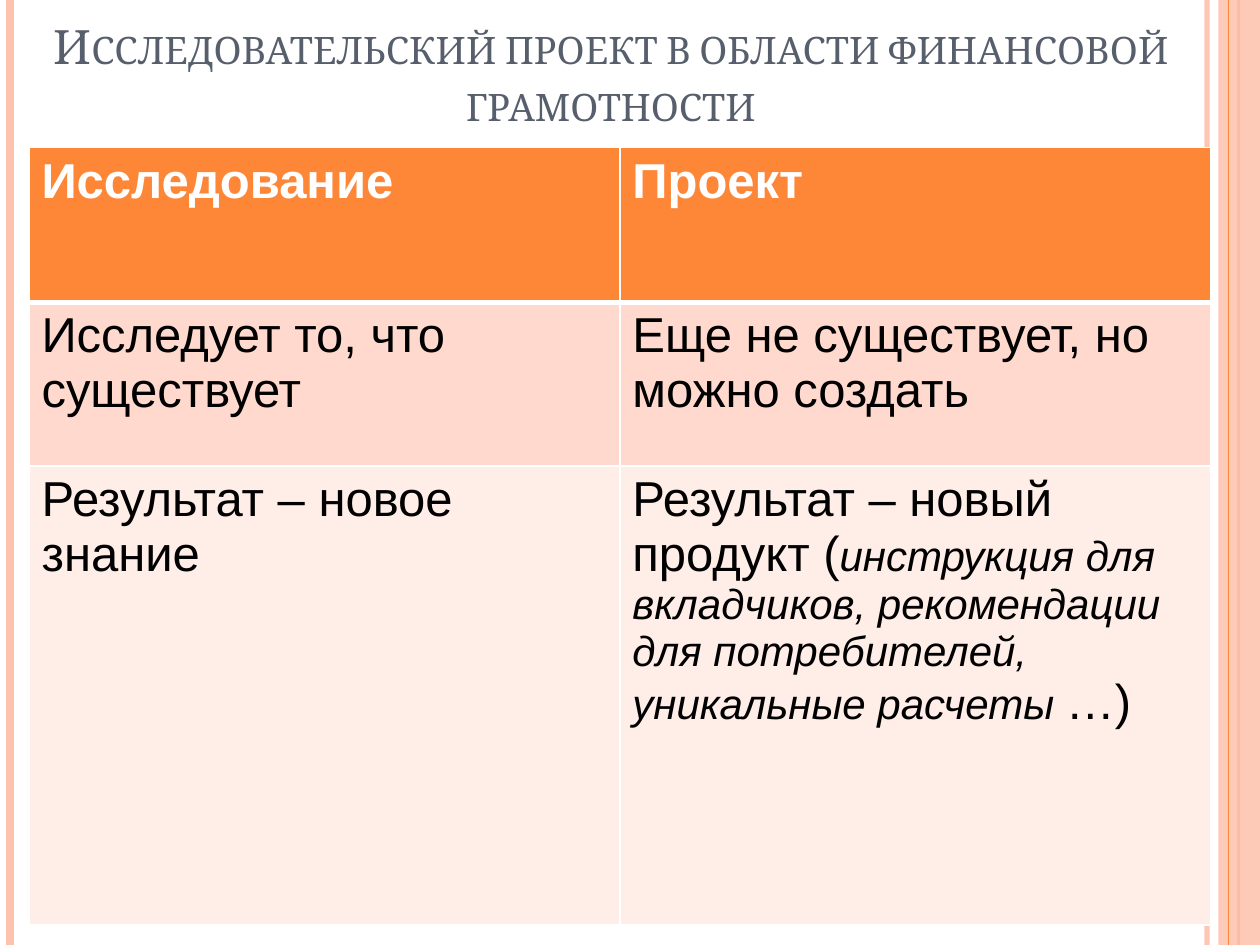
from lxml import etree
from pptx import Presentation
from pptx.dml.color import RGBColor as RGB
from pptx.enum.shapes import MSO_CONNECTOR as CONN, MSO_SHAPE as SHAPE
from pptx.enum.text import MSO_ANCHOR as ANCHOR, PP_ALIGN as ALIGN
from pptx.oxml.ns import qn
from pptx.util import Inches, Pt

COLORS = {
    "orange": "FE8637", "peach": "FEC3AE", "slate": "575F6D",
    "white": "FFFFFF", "black": "000000",
    "band_dark": "FFD9CE", "band_light": "FFEDE8",
}


def color(name):
    return RGB.from_string(COLORS[name])


def set_alpha(element, percent):
    """Make the first solid colour inside the element partly transparent."""
    rgb = next(element.iter(qn("a:srgbClr")))
    etree.SubElement(rgb, qn("a:alpha")).set("val", str(percent * 1000))


def add_run(p, text, font="Arial", size=28, fill="black", bold=False,
            italic=False, small_caps=False):
    r = p.add_run()
    r.text = text
    r.font.name, r.font.size = font, Pt(size)
    r.font.bold, r.font.italic = bold, italic
    r.font.color.rgb = color(fill)
    if small_caps:
        r._r.get_or_add_rPr().set("cap", "small")
    return r


def add_border(cell, side, width):
    ln = etree.SubElement(cell._tc.get_or_add_tcPr(), qn(f"a:ln{side}"),
                          w=str(Pt(width)))
    solid = etree.SubElement(ln, qn("a:solidFill"))
    etree.SubElement(solid, qn("a:srgbClr"), val=COLORS["white"])


class SlideBuilder:
    """Holds the slide and draws its elements in one style."""

    def __init__(self, prs):
        self.slide = prs.slides.add_slide(prs.slide_layouts[6])
        self.shapes = self.slide.shapes
        self.height = prs.slide_height
        bg = self.slide.background.fill
        bg.solid()
        bg.fore_color.rgb = color("white")

    def stripe(self, x, name, width, alpha=None):
        """Vertical line over the full slide height."""
        sp = self.shapes.add_connector(CONN.STRAIGHT, Inches(x), 0,
                                       Inches(x), self.height)
        sp.line.color.rgb = color(name)
        sp.line.width = Pt(width)
        props = sp._element.spPr
        etree.SubElement(props, qn("a:effectLst"))
        if alpha:
            set_alpha(props, alpha)

    def side_band(self, x, width, name, alpha):
        sp = self.shapes.add_shape(SHAPE.RECTANGLE, Inches(x), 0,
                                   Inches(width), self.height)
        sp.shadow.inherit = False
        sp.fill.solid()
        sp.fill.fore_color.rgb = color(name)
        set_alpha(sp._element.spPr, alpha)
        sp.line.fill.background()

    def title(self, text, x, y, w, h):
        sp = self.shapes.add_textbox(Inches(x), Inches(y), Inches(w), Inches(h))
        tf = sp.text_frame
        tf.word_wrap = True
        tf.vertical_anchor = ANCHOR.BOTTOM
        p = tf.paragraphs[0]
        p.alignment = ALIGN.CENTER
        add_run(p, text, font="Cambria", size=27, fill="slate", small_caps=True)

    def table(self, rows, x, y, col_width, heights, fills):
        """Each cell is a list of (text, format) runs; row 0 is the header."""
        cols = len(rows[0])
        table = self.shapes.add_table(
            len(rows), cols, Inches(x), Inches(y),
            Inches(col_width * cols), Inches(sum(heights))).table
        for col in table.columns:
            col.width = Inches(col_width)
        for i, (row, height, fill) in enumerate(zip(rows, heights, fills)):
            table.rows[i].height = Inches(height)
            for j, runs in enumerate(row):
                cell = table.cell(i, j)
                for side in "LRTB":
                    thick = (i, side) in ((0, "B"), (1, "T"))
                    add_border(cell, side, 3 if thick else 1)
                cell.fill.solid()
                cell.fill.fore_color.rgb = color(fill)
                for text, style in runs:
                    add_run(cell.text_frame.paragraphs[0], text, **style)


def main():
    prs = Presentation()
    prs.slide_width, prs.slide_height = Inches(10), Inches(7.5)
    s = SlideBuilder(prs)

    s.stripe(9.58, "peach", 3, alpha=93)
    s.stripe(0.08, "peach", 4.5)
    s.stripe(9.83, "orange", 1.5)
    s.side_band(9.67, 0.33, "peach", alpha=87)
    s.stripe(9.75, "orange", 0.75)

    s.title("Исследовательский проект в области финансовой грамотности",
            0.16, 0, 9.38, 1.09)

    header = {"fill": "white", "bold": True}
    examples = {"size": 24, "italic": True}
    rows = [
        [[("Исследование", header)], [("Проект", header)]],
        [[("Исследует то, что существует", {})],
         [("Еще не существует, но можно создать", {})]],
        [[("Результат – новое знание", {})],
         [("Результат – новый продукт (", {}),
          ("инструкция для вкладчиков, рекомендации для потребителей, "
           "уникальные расчеты ", examples),
          ("…)", {})]],
    ]
    s.table(rows, 0.23, 1.17, col_width=4.69, heights=[1.23, 1.3, 3.64],
            fills=["orange", "band_dark", "band_light"])
    prs.save("out.pptx")


if __name__ == "__main__":
    main()
